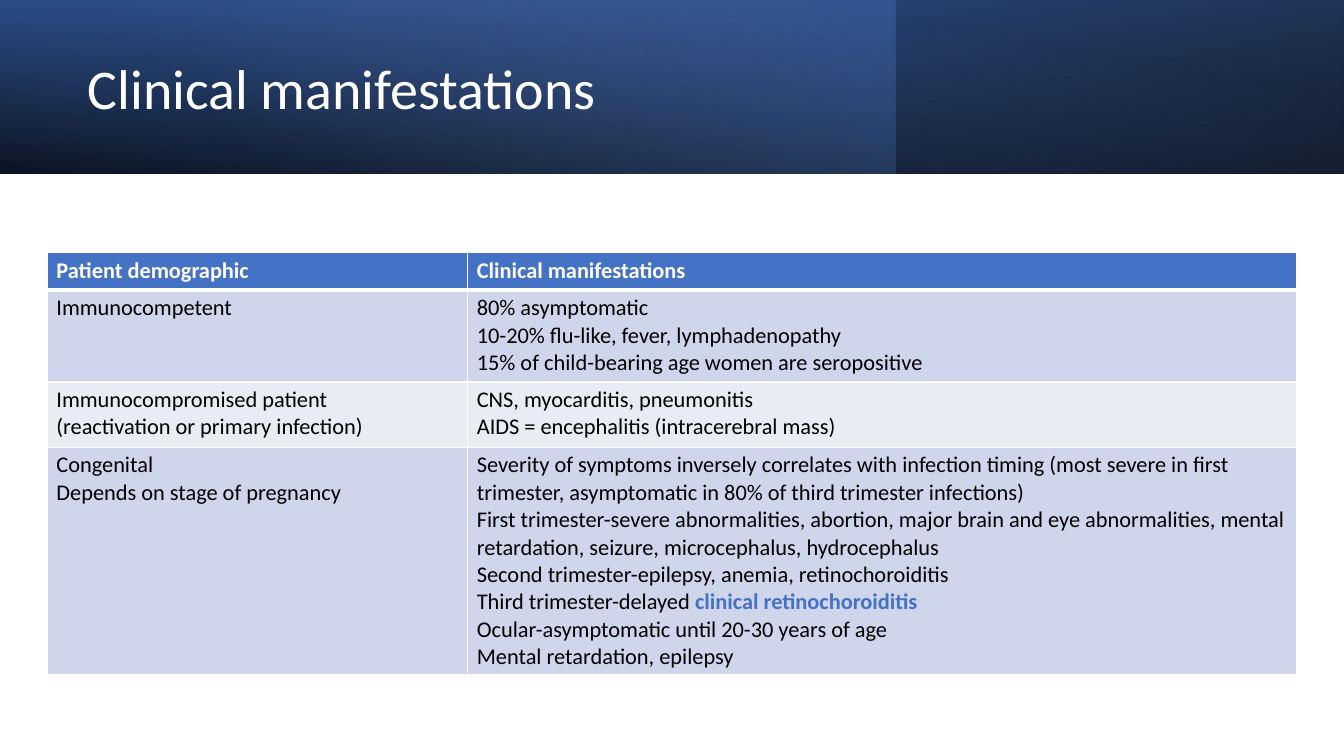
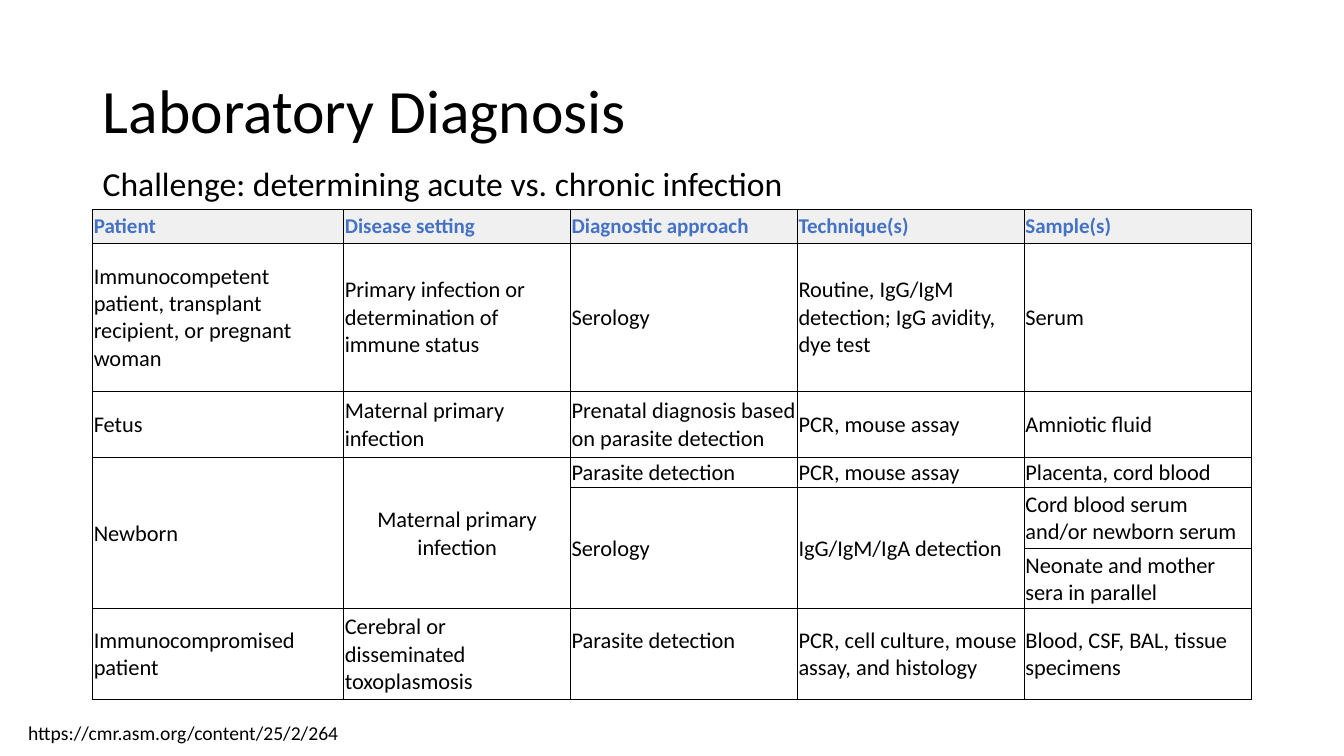
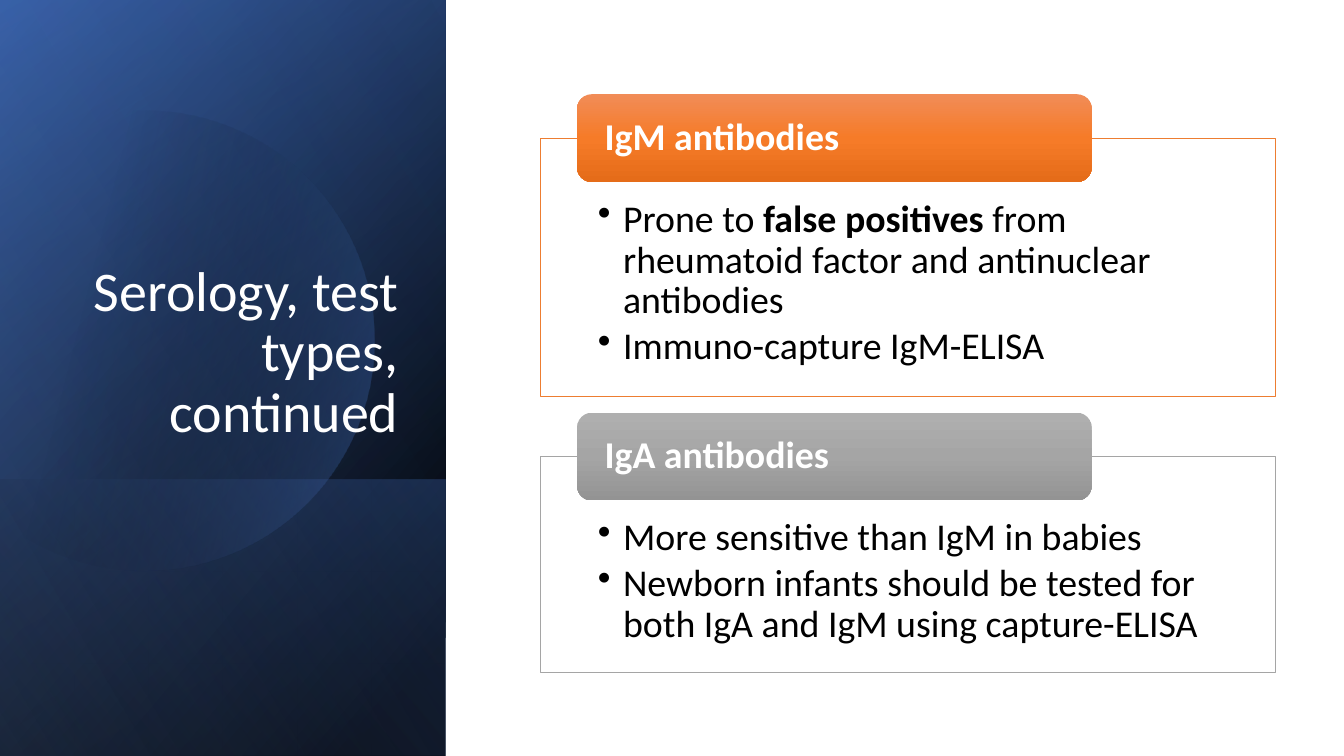
from math import acos, cos, pi, sin
from typing import NamedTuple

from lxml.etree import SubElement
from pptx import Presentation
from pptx.dml.color import RGBColor
from pptx.enum.shapes import MSO_SHAPE as Preset
from pptx.enum.text import MSO_ANCHOR as Anchor, MSO_AUTO_SIZE as AutoSize, PP_ALIGN as Align
from pptx.oxml.ns import qn
from pptx.util import Inches, Pt

FONT = "Calibri"
WHITE = RGBColor(0xFF, 0xFF, 0xFF)
BLACK = RGBColor(0x00, 0x00, 0x00)
BLUE = RGBColor(0x44, 0x72, 0xC4)
DEEP_BLUE = RGBColor(0x2F, 0x55, 0x97)
PALE_BLUE = RGBColor(0x8F, 0xAA, 0xDC)
BAND_DARK = RGBColor(0xCF, 0xD5, 0xEA)
BAND_LIGHT = RGBColor(0xE9, 0xEB, 0xF5)
HEADER_GREY = RGBColor(0xF0, 0xF0, 0xF0)
ORANGE = RGBColor(0xED, 0x7D, 0x31)
GREY = RGBColor(0xA5, 0xA5, 0xA5)
ORANGE_SHADES = [(0, RGBColor(0xF1, 0x8C, 0x57)), (50, RGBColor(0xF6, 0x7B, 0x28)),
                 (100, RGBColor(0xE5, 0x6C, 0x19))]
GREY_SHADES = [(0, RGBColor(0xAF, 0xAF, 0xAF)), (50, GREY),
               (100, RGBColor(0x93, 0x93, 0x93))]

SLIDE_WIDTH, SLIDE_HEIGHT = 13.33, 7.5
TITLE_ONLY = 5


class Box(NamedTuple):
    """A rectangle in inches."""
    left: float
    top: float
    width: float
    height: float

    def inner(self, left, top, width, height):
        """A box whose corner is measured from this box's corner."""
        return Box(self.left + left, self.top + top, width, height)

    def turned(self):
        """The box that covers this one after a quarter turn."""
        shift = (self.width - self.height) / 2
        return Box(self.left + shift, self.top - shift, self.height, self.width)

    def lengths(self):
        return [Inches(value) for value in self]


def write_lines(frame, lines, size, color, bold=False, accent=None, align=Align.LEFT,
                spacing=None, space_after=None, bullet=False):
    """Write paragraphs; in a tuple every second run is emphasised."""
    for index, line in enumerate(lines):
        paragraph = frame.paragraphs[0] if index == 0 else frame.add_paragraph()
        if bullet:
            properties = paragraph._p.get_or_add_pPr()
            properties.set("marL", str(Inches(0.25)))
            properties.set("indent", str(-Inches(0.25)))
            SubElement(properties, qn("a:buChar"), char="•")
        paragraph.alignment = align
        if spacing:
            paragraph.line_spacing = spacing
        if space_after:
            paragraph.space_after = Pt(space_after)
        for position, text in enumerate((line,) if isinstance(line, str) else line):
            emphasised = position % 2 == 1
            run = paragraph.add_run()
            run.text = text
            run.font.name = FONT
            run.font.size = Pt(size)
            run.font.bold = bold or emphasised
            run.font.color.rgb = accent if emphasised and accent else color


def set_margins(holder, left, top, right, bottom):
    holder.margin_left, holder.margin_top = Inches(left), Inches(top)
    holder.margin_right, holder.margin_bottom = Inches(right), Inches(bottom)


def add_title(slide, box, text, size, color, anchor=Anchor.MIDDLE, align=Align.LEFT):
    """Place the title placeholder in front of everything drawn so far."""
    title = slide.shapes.title
    title.left, title.top, title.width, title.height = box.lengths()
    frame = title.text_frame
    frame.auto_size = AutoSize.NONE
    frame.word_wrap = True
    frame.vertical_anchor = anchor
    write_lines(frame, [text], size, color, align=align, spacing=0.9)
    title.element.getparent().append(title.element)


def add_text(slide, box, text, size, wrap=True, spacing=None):
    frame = slide.shapes.add_textbox(*box.lengths()).text_frame
    frame.word_wrap = wrap
    write_lines(frame, [text], size, BLACK, spacing=spacing)


def fill_gradient(shape, stops, angle):
    """Stops are (position, colour[, opacity]) in percent; the angle runs clockwise."""
    shape.fill.gradient()
    gradient = shape.element.spPr.find(qn("a:gradFill"))
    stop_list = gradient.find(qn("a:gsLst"))
    stop_list.clear()
    for position, color, *opacity in stops:
        stop = SubElement(stop_list, qn("a:gs"), pos=str(position * 1000))
        tone = SubElement(stop, qn("a:srgbClr"), val=str(color))
        for percent in opacity:
            SubElement(tone, qn("a:alpha"), val=str(percent * 1000))
    direction = gradient.find(qn("a:lin"))
    direction.set("ang", str(angle * 60000))
    direction.set("scaled", "0")
    shape.line.fill.background()
    shape.shadow.inherit = False


def add_layer(slide, box, stops, angle, rotation=0, flip=True):
    """Add a gradient rectangle that covers box once it is rotated."""
    frame = box.turned() if rotation == 90 else box
    layer = slide.shapes.add_shape(Preset.RECTANGLE, *frame.lengths())
    layer.rotation = rotation
    if flip:
        layer.element.spPr.xfrm.set("flipH", "1")
    fill_gradient(layer, stops, angle)


def add_cut_disc(slide, center_x, center_y, radius, cut_x, stops, angle):
    """Add a disc cut off straight at its left, at cut_x."""
    reach = acos((cut_x - center_x) / radius)
    steps = 90
    angles = [reach * (2 * step / steps - 1) for step in range(steps + 1)]
    points = [(Inches(center_x + radius * cos(turn)), Inches(center_y + radius * sin(turn)))
              for turn in angles]
    builder = slide.shapes.build_freeform(*points[0])
    builder.add_line_segments(points[1:], close=True)
    fill_gradient(builder.convert_to_shape(), stops, angle)


def add_table(slide, box, columns, rows):
    table = slide.shapes.add_table(len(rows), len(columns), *box.lengths()).table
    for column, width in zip(table.columns, columns):
        column.width = Inches(width)
    for row, height in zip(table.rows, rows):
        row.height = Inches(height)
    return table


def style_cell(cell, fill, border, widths, margins, anchor):
    """Widths are the border widths at left, right, top and bottom, in points."""
    properties = cell._tc.get_or_add_tcPr()
    for edge, width in zip("LRTB", widths):
        line = SubElement(properties, qn(f"a:ln{edge}"), w=str(Pt(width)))
        line_fill = SubElement(line, qn("a:solidFill"))
        SubElement(line_fill, qn("a:srgbClr"), val=str(border))
    cell.fill.solid()
    cell.fill.fore_color.rgb = fill
    cell.vertical_anchor = anchor
    set_margins(cell, *margins)


def add_banded_table(slide, box, columns, rows, content):
    table = add_table(slide, box, columns, rows)
    for row, texts in enumerate(content):
        header = row == 0
        fill = BLUE if header else BAND_DARK if row % 2 else BAND_LIGHT
        widths = (1, 1, 3 if row == 1 else 1, 3 if header else 1)
        for column, lines in enumerate(texts):
            cell = table.cell(row, column)
            style_cell(cell, fill, WHITE, widths, (0.09, 0.04, 0.09, 0.04),
                       Anchor.MIDDLE if header else Anchor.TOP)
            write_lines(cell.text_frame, lines, 16, WHITE if header else BLACK,
                        bold=header, accent=BLUE)


def add_ruled_table(slide, box, columns, rows, content, spans, centered, raised):
    """A cell in raised sits half a line higher; None marks a merged cell."""
    table = add_table(slide, box, columns, rows)
    for row, texts in enumerate(content):
        header = row == 0
        for column, text in enumerate(texts):
            cell = table.cell(row, column)
            bottom = 0.27 if (row, column) in raised else 0
            style_cell(cell, HEADER_GREY if header else WHITE, BLACK, [0.5] * 4,
                       (0.01, 0.01, 0.01, bottom), Anchor.MIDDLE)
            if text:
                write_lines(cell.text_frame, [text], 15 if header else 16,
                            BLUE if header else BLACK, bold=header,
                            align=Align.CENTER if (row, column) in centered else Align.LEFT)
    for (top, left), (bottom, right) in spans:
        table.cell(top, left).merge(table.cell(bottom, right))


def add_title_band(slide, box):
    add_layer(slide, box, [(0, BLACK, 96), (100, DEEP_BLUE)], 100, rotation=180)
    add_layer(slide, box._replace(width=box.width * 2 / 3),
              [(0, BLUE, 41), (74, PALE_BLUE, 0)], 140, flip=False)
    add_layer(slide, box, [(0, BLACK, 63), (78, BLUE, 15)], 260)


def add_side_band(slide, box):
    foot = box.inner(0, box.height - 2.74, box.width, 2.74)
    add_layer(slide, box, [(8, BLACK), (100, DEEP_BLUE)], 50, rotation=90)
    add_layer(slide, box, [(0, BLACK, 0), (99, BLUE, 46)], 30, rotation=90)
    add_layer(slide, foot, [(2, BLUE, 29), (100, BLACK, 30)], 130, rotation=90)
    add_cut_disc(slide, box.left + 1.43, box.top + 3.38, 2.28, box.left - 0.15,
                 [(29, BLACK, 0), (100, BLUE, 43)], 14)
    add_layer(slide, box, [(0, BLACK, 0), (99, PALE_BLUE, 11)], 120, rotation=90)


def add_antibody_panel(slide, box, heading, points, color, shades):
    """Add an outlined list with a heading tab across its top edge."""
    panel = slide.shapes.add_shape(Preset.RECTANGLE, *box.lengths())
    panel.shadow.inherit = False
    panel.fill.solid()
    panel.fill.fore_color.rgb = WHITE
    panel.line.color.rgb = color
    panel.line.width = Pt(0.5)
    tab_height = 0.87
    tab_box = box.inner(box.width * 0.05, -tab_height / 2, box.width * 0.7, tab_height)
    tab = slide.shapes.add_shape(Preset.ROUNDED_RECTANGLE, *tab_box.lengths())
    fill_gradient(tab, shades, 90)
    for shape, anchor, margins in ((panel, Anchor.TOP, (0.57, 0.61, 0.57, 0.21)),
                                   (tab, Anchor.MIDDLE, (0.23, 0, 0.23, 0))):
        shape.text_frame.word_wrap = True
        shape.text_frame.vertical_anchor = anchor
        set_margins(shape.text_frame, *margins)
    write_lines(panel.text_frame, points, 27, BLACK, spacing=0.9, space_after=3.6, bullet=True)
    write_lines(tab.text_frame, [heading], 27, WHITE, bold=True, spacing=0.9)


def build_manifestations(slide):
    band = Box(0, 0, SLIDE_WIDTH, 1.72)
    add_title_band(slide, band)
    add_title(slide, band.inner(0.77, 0.27, 7.72, 1.27), "Clinical manifestations", 40, WHITE)
    add_banded_table(slide, Box(0.47, 2.5, 12.39, 4.16), [4.17, 8.22], [0.38, 0.91, 0.65, 2.22], [
        (["Patient demographic"], ["Clinical manifestations"]),
        (["Immunocompetent"],
         ["80% asymptomatic",
          "10-20% flu-like, fever, lymphadenopathy",
          "15% of child-bearing age women are seropositive"]),
        (["Immunocompromised patient", "(reactivation or primary infection)"],
         ["CNS, myocarditis, pneumonitis", "AIDS = encephalitis (intracerebral mass)"]),
        (["Congenital", "Depends on stage of pregnancy"],
         ["Severity of symptoms inversely correlates with infection timing (most severe in "
          "first trimester, asymptomatic in 80% of third trimester infections)",
          "First trimester-severe abnormalities, abortion, major brain and eye abnormalities, "
          "mental retardation, seizure, microcephalus, hydrocephalus",
          "Second trimester-epilepsy, anemia, retinochoroiditis",
          ("Third trimester-delayed ", "clinical retinochoroiditis"),
          "Ocular-asymptomatic until 20-30 years of age",
          "Mental retardation, epilepsy"]),
    ])


def build_diagnosis(slide):
    content = Box(0.92, 0.4, 11.5, 6.54)
    add_title(slide, content._replace(height=1.45), "Laboratory Diagnosis", 44, BLACK)
    add_text(slide, content.inner(0, 1.21, content.width, 0.47),
             "Challenge: determining acute vs. chronic infection", 24, spacing=0.9)
    add_ruled_table(
        slide, content.inner(0, 1.68, content.width, 4.86),
        [2.49] + [2.25] * 4, [0.33, 1.47, 0.66, 0.3, 0.6, 0.6, 0.9],
        [
            ("Patient", "Disease setting", "Diagnostic approach", "Technique(s)", "Sample(s)"),
            ("Immunocompetent patient, transplant recipient, or pregnant woman",
             "Primary infection or determination of immune status", "Serology",
             "Routine, IgG/IgM detection; IgG avidity, dye test", "Serum"),
            ("Fetus", "Maternal primary infection",
             "Prenatal diagnosis based on parasite detection",
             "PCR, mouse assay", "Amniotic fluid"),
            ("Newborn", "Maternal primary infection", "Parasite detection",
             "PCR, mouse assay", "Placenta, cord blood"),
            (None, None, "Serology", "IgG/IgM/IgA detection",
             "Cord blood serum and/or newborn serum"),
            (None, None, None, None, "Neonate and mother sera in parallel"),
            ("Immunocompromised patient", "Cerebral or disseminated toxoplasmosis",
             "Parasite detection", "PCR, cell culture, mouse assay, and histology",
             "Blood, CSF, BAL, tissue specimens"),
        ],
        spans=[((3, 0), (5, 0)), ((3, 1), (5, 1)), ((4, 2), (5, 2)), ((4, 3), (5, 3))],
        centered={(3, 1)}, raised={(6, 2)})
    add_text(slide, Box(0.18, 7.1, 3.31, 0.34), "https://cmr.asm.org/content/25/2/264", 14,
             wrap=False)


def build_serology(slide):
    band = Box(0, 0, 4.42, SLIDE_HEIGHT)
    add_side_band(slide, band)
    add_title(slide, band.inner(0.64, 1.84, 3.41, 2.62), "Serology, test types, continued",
              40, WHITE, Anchor.BOTTOM, Align.RIGHT)
    add_antibody_panel(
        slide, Box(5.36, 1.37, 7.29, 2.56), "IgM antibodies",
        [("Prone to ", "false positives ", "from rheumatoid factor and antinuclear antibodies"),
         "Immuno-capture IgM-ELISA"], ORANGE, ORANGE_SHADES)
    add_antibody_panel(
        slide, Box(5.36, 4.53, 7.29, 2.14), "IgA antibodies",
        ["More sensitive than IgM in babies",
         "Newborn infants should be tested for both IgA and IgM using capture-ELISA"],
        GREY, GREY_SHADES)


def main():
    presentation = Presentation()
    presentation.slide_width = Inches(SLIDE_WIDTH)
    presentation.slide_height = Inches(SLIDE_HEIGHT)
    for build in (build_manifestations, build_diagnosis, build_serology):
        build(presentation.slides.add_slide(presentation.slide_layouts[TITLE_ONLY]))
    presentation.save("out.pptx")


if __name__ == "__main__":
    main()
